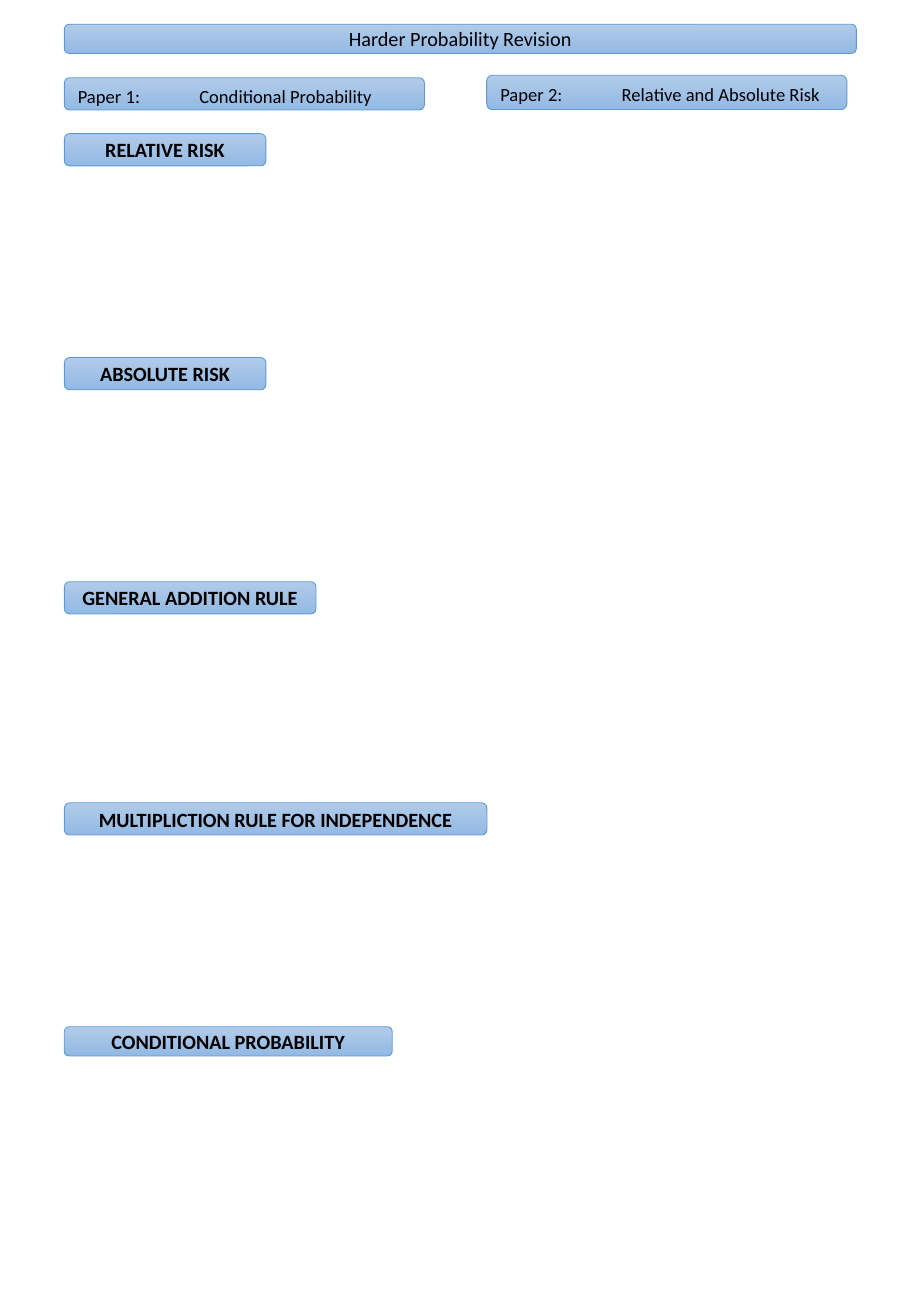
"""Build the Harder Probability Revision sheet."""
from typing import NamedTuple

from pptx import Presentation
from pptx import util as u
from pptx.dml import color as c
from pptx.enum import shapes, text

HUES = {"top": "B1CBE9", "base": "93B9E4", "edge": "5B9BD5", "ink": "000000"}
LEFT = 38.16
MID, HIGH = text.MSO_ANCHOR.MIDDLE, text.MSO_ANCHOR.TOP

FORMS = {
    "title": {"size": u.Pt(12), "bold": False},
    "paper": {"size": u.Pt(11), "bold": False},
    "head": {"size": u.Pt(12), "bold": True},
}


class Bar(NamedTuple):
    label: str
    x: float
    y: float
    w: float
    h: float
    form: str = "head"


BARS = [
    Bar("Harder Probability Revision", LEFT, 14.4, 469.44, 17.28, "title"),
    Bar("Paper 1:\tConditional Probability", LEFT, 46.08, 213.5, 19.1, "paper"),
    Bar("Paper 2:\tRelative and Absolute Risk", 288.5, 44.64, 213.5, 20.3, "paper"),
    Bar("RELATIVE RISK", LEFT, 79.2, 119.5, 19.1),
    Bar("ABSOLUTE RISK", LEFT, 211.9, 119.5, 19.1),
    Bar("GENERAL ADDITION RULE", LEFT, 344.7, 149.2, 19.1),
    Bar("MULTIPLICTION RULE FOR INDEPENDENCE", LEFT, 475.7, 250.5, 19.1),
    Bar("CONDITIONAL PROBABILITY", LEFT, 608.4, 194.4, 17.28),
]


def hue(name: str) -> c.RGBColor:
    return c.RGBColor.from_string(HUES[name])


def draw(slide, bar: Bar) -> None:
    box = slide.shapes.add_shape(
        shapes.MSO_SHAPE.ROUNDED_RECTANGLE,
        *(u.Pt(n) for n in (bar.x, bar.y, bar.w, bar.h)))
    box.shadow.inherit = False
    box.fill.gradient()
    box.fill.gradient_angle = 270
    for stop, name in zip(box.fill.gradient_stops, ("top", "base")):
        stop.color.rgb = hue(name)
        stop.position = 0 if name == "top" else 1
    box.line.color.rgb = hue("edge")
    box.line.width = u.Pt(0.5)

    paper = bar.form == "paper"
    frame = box.text_frame
    frame.word_wrap = True
    frame.vertical_anchor = HIGH if paper else MID
    para = frame.paragraphs[0]
    para.alignment = text.PP_ALIGN.LEFT if paper else text.PP_ALIGN.CENTER
    run = para.add_run()
    run.text = bar.label
    for key, value in {"name": "Calibri", **FORMS[bar.form]}.items():
        setattr(run.font, key, value)
    run.font.color.rgb = hue("ink")


def main() -> None:
    deck = Presentation()
    deck.slide_width, deck.slide_height = u.Pt(540), u.Pt(779.76)
    slide = deck.slides.add_slide(deck.slide_layouts[6])
    for bar in BARS:
        draw(slide, bar)
    deck.save("out.pptx")


if __name__ == "__main__":
    main()
